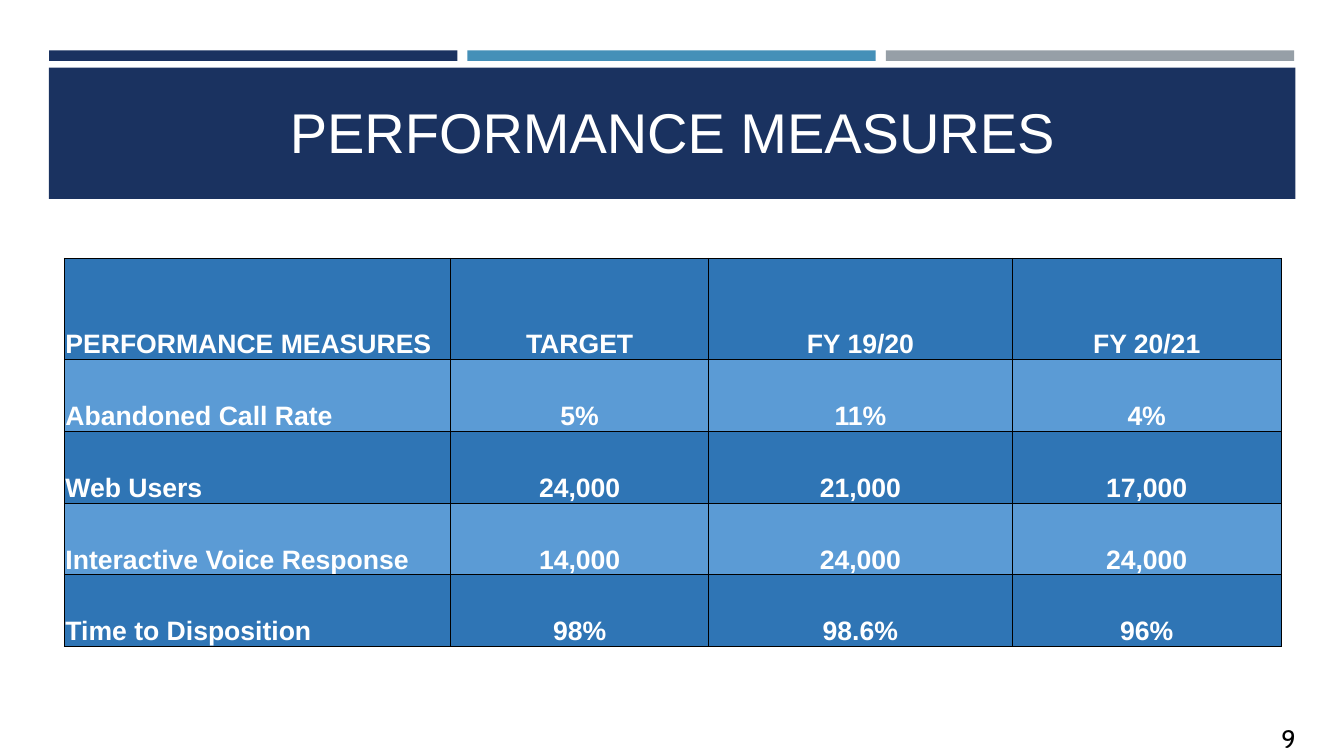
from lxml.etree import SubElement
from pptx import Presentation
from pptx.dml.color import RGBColor
from pptx.enum.shapes import MSO_SHAPE as Shape
from pptx.enum.text import MSO_ANCHOR as Anchor, MSO_AUTO_SIZE as AutoSize, PP_ALIGN as Align
from pptx.oxml.ns import qn
from pptx.util import Inches, Pt

COLORS = {
    "navy": "1A3260", "teal": "4590B8", "gray": "969FA7",
    "dark row": "2F75B5", "light row": "5B9BD5",
    "white": "FFFFFF", "black": "000000",
}
MEASURES = [
    ["PERFORMANCE MEASURES", "TARGET", "FY 19/20", "FY 20/21"],
    ["Abandoned Call Rate", "5%", "11%", "4%"],
    ["Web Users", "24,000", "21,000", "17,000"],
    ["Interactive Voice Response", "14,000", "24,000", "24,000"],
    ["Time to Disposition", "98%", "98.6%", "96%"],
]
COLUMN_WIDTHS = [28.73, 19.2, 22.58, 20.03]
ROW_HEIGHTS = [13.33] + [9.5] * 4


def color(name):
    return RGBColor.from_string(COLORS[name])


class SlideBuilder:
    """Places elements by percent of the slide's width and height."""

    def __init__(self, presentation):
        self.width = presentation.slide_width
        self.height = presentation.slide_height
        self.slide = presentation.slides.add_slide(presentation.slide_layouts[5])
        self.shapes = self.slide.shapes

    def across(self, percent):
        return round(self.width * percent / 100)

    def down(self, percent):
        return round(self.height * percent / 100)

    def box(self, left, top, width, height):
        return self.across(left), self.down(top), self.across(width), self.down(height)

    def set_text(self, frame, text, size, font="Arial", ink="white", bold=False, align=Align.LEFT):
        paragraph = frame.paragraphs[0]
        paragraph.text = text
        paragraph.alignment = align
        paragraph.font.name = font
        paragraph.font.size = Pt(size)
        paragraph.font.bold = bold
        paragraph.font.color.rgb = color(ink)

    def bar(self, fill, *place):
        shape = self.shapes.add_shape(Shape.RECTANGLE, *self.box(*place))
        shape.shadow.inherit = False
        shape.fill.solid()
        shape.fill.fore_color.rgb = color(fill)
        shape.line.fill.background()

    def title(self, text, *place):
        """Fill the title placeholder and bring it in front of the bars."""
        title = self.shapes.title
        title.left, title.top, title.width, title.height = self.box(*place)
        frame = title.text_frame
        frame.auto_size = AutoSize.NONE
        frame.vertical_anchor = Anchor.BOTTOM
        self.set_text(frame, text, 40, align=Align.CENTER)
        self.shapes._spTree.append(title._element)

    def label(self, text, *place):
        frame = self.shapes.add_textbox(*self.box(*place)).text_frame
        frame.word_wrap = True
        self.set_text(frame, text, 18, font="Cabin", ink="black")

    def borders(self, cell, widths):
        """Draw left, right, top and bottom borders of the given point widths."""
        properties = cell._tc.get_or_add_tcPr()
        for index, (side, width) in enumerate(zip("LRTB", widths)):
            line = SubElement(properties, qn(f"a:ln{side}"), w=str(Pt(width)))
            fill = SubElement(line, qn("a:solidFill"))
            SubElement(fill, qn("a:srgbClr"), val=COLORS["black"])
            properties.insert(index, line)

    def table(self, values, left, top, column_widths, row_heights):
        place = self.box(left, top, sum(column_widths), sum(row_heights))
        table = self.shapes.add_table(len(values), len(values[0]), *place).table
        for column, width in zip(table.columns, column_widths):
            column.width = self.across(width)
        last_row, last_column = len(values) - 1, len(values[0]) - 1
        for r, (row, height) in enumerate(zip(values, row_heights)):
            table.rows[r].height = self.down(height)
            for c, text in enumerate(row):
                cell = table.cell(r, c)
                cell.fill.solid()
                cell.fill.fore_color.rgb = color("light row" if r % 2 else "dark row")
                cell.margin_left = cell.margin_right = cell.margin_top = Inches(0.01)
                cell.margin_bottom = 0
                cell.vertical_anchor = Anchor.BOTTOM
                align = Align.CENTER if c else Align.LEFT
                self.set_text(cell.text_frame, text, 19, bold=True, align=align)
                outer_sides = (c == 0, c == last_column, r == 0, r == last_row)
                self.borders(cell, [1 if outer else 0.5 for outer in outer_sides])


def main():
    presentation = Presentation()
    presentation.slide_width = Inches(13.33)
    presentation.slide_height = Inches(7.5)
    builder = SlideBuilder(presentation)
    for index, fill in enumerate(["navy", "teal", "gray"]):
        builder.bar(fill, 3.65 + 31.13 * index, 6.67, 30.38, 1.4)
    builder.bar("navy", 3.63, 8.95, 92.75, 17.35)
    builder.title("PERFORMANCE MEASURES", 4.8, 10.27, 90.45, 12.13)
    builder.table(MEASURES, 4.8, 34.2, COLUMN_WIDTHS, ROW_HEIGHTS)
    builder.label("9", 94.6, 95.07, 4.5, 5.33)
    presentation.save("out.pptx")


if __name__ == "__main__":
    main()
